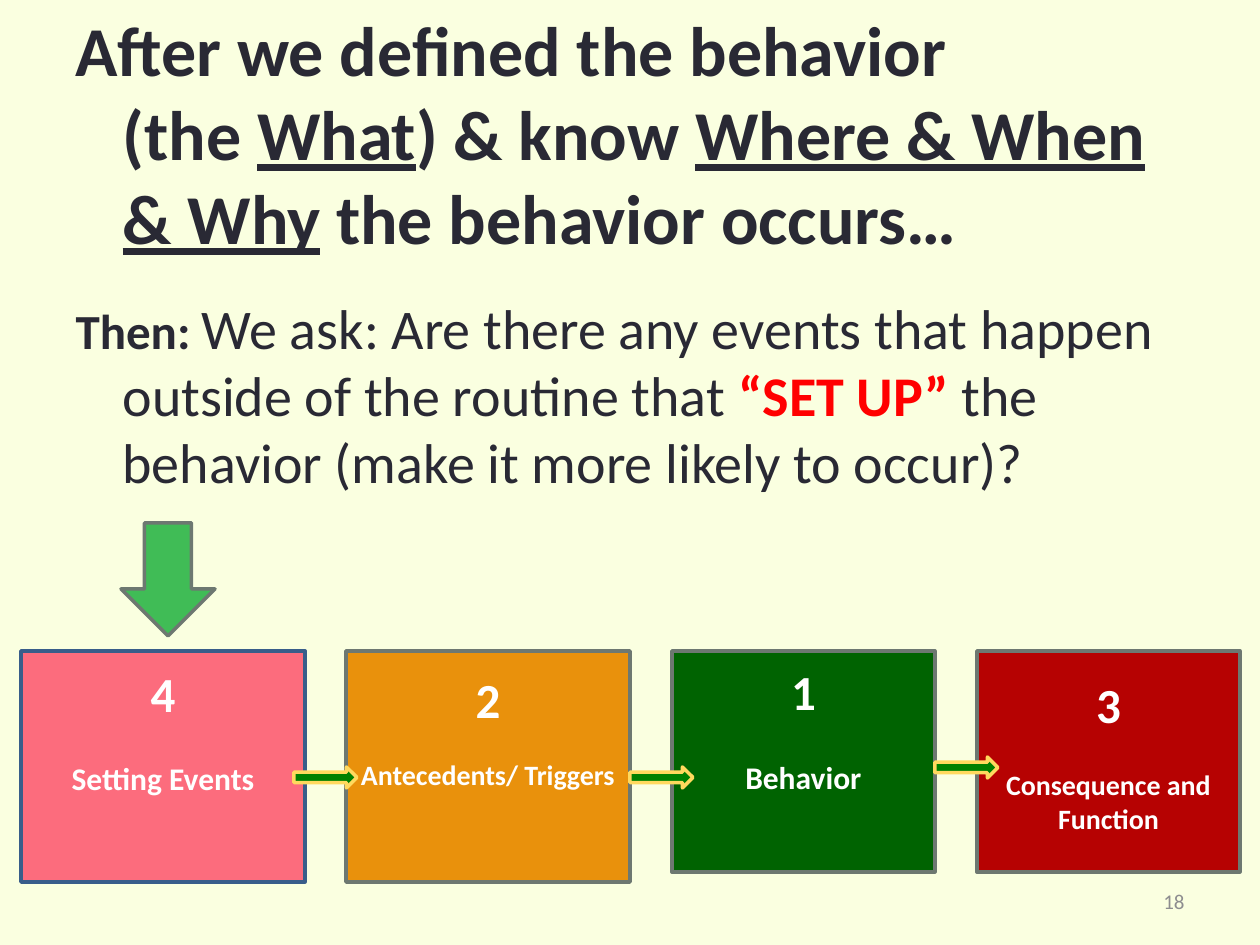
from pptx import Presentation
from pptx.dml.color import RGBColor
from pptx.enum.shapes import MSO_SHAPE
from pptx.enum.text import MSO_ANCHOR, MSO_AUTO_SIZE, PP_ALIGN
from pptx.util import Pt

PX = 914400 // 126
FONT = "Calibri"
COLORS = {
    "background": "FAFFE0",
    "ink": "292934",
    "alert": "FF0000",
    "white": "FFFFFF",
    "grey": "8D8D8F",
    "outline": "6D7871",
    "setting": "FC6C7D",
    "setting outline": "385D8A",
    "antecedent": "E9910C",
    "behavior": "006301",
    "consequence": "B60202",
    "step arrow": "008000",
    "step outline": "FFD95E",
    "pointer": "40BC56",
}


def set_font(font, size, color, bold=False):
    font.name = FONT
    font.size = Pt(size)
    font.bold = bold
    font.color.rgb = RGBColor.from_string(COLORS[color])


def add_filled(kind, left, top, width, height, fill, outline):
    """Add a preset shape, placed in px, with a flat fill and a 2 pt outline."""
    shape = slide.shapes.add_shape(kind, left * PX, top * PX, width * PX, height * PX)
    shape.shadow.inherit = False
    shape.fill.solid()
    shape.fill.fore_color.rgb = RGBColor.from_string(COLORS[fill])
    shape.line.color.rgb = RGBColor.from_string(COLORS[outline])
    shape.line.width = Pt(2)
    return shape


prs = Presentation()
prs.slide_width, prs.slide_height = 1260 * PX, 945 * PX
slide = prs.slides.add_slide(prs.slide_layouts[1])
slide.background.fill.solid()
slide.background.fill.fore_color.rgb = RGBColor.from_string(COLORS["background"])

# Heading and question share the body placeholder; the title is not needed
unused_title = slide.shapes.title.element
unused_title.getparent().remove(unused_title)
body = slide.placeholders[1]
body.left, body.top, body.width, body.height = 63 * PX, 0, 1134 * PX, 878 * PX
body.text_frame.auto_size = MSO_AUTO_SIZE.NONE
body.text_frame.vertical_anchor = MSO_ANCHOR.TOP

heading = body.text_frame.paragraphs[0]
question = body.text_frame.add_paragraph()
for paragraph, before, after in [(heading, 0, 14), (question, 6, 0)]:
    paragraph.space_before, paragraph.space_after = Pt(before), Pt(after)
    properties = paragraph._p.get_or_add_pPr()
    properties.set("marL", str(47 * PX))
    properties.set("indent", str(-47 * PX))
    properties.append(properties.makeelement(
        "{http://schemas.openxmlformats.org/drawingml/2006/main}buNone", {}))

set_font(heading.font, 40, "ink", True)
heading.add_run().text = "After we defined the behavior"
heading.add_line_break()
for text, underlined in [
    ("(the ", False),
    ("What", True),
    (") & know ", False),
    ("Where & When & Why", True),
    (" the behavior occurs…", False),
]:
    run = heading.add_run()
    run.text = text
    set_font(run.font, 40, "ink", True)
    run.font.underline = underlined

for text, size, color, bold in [
    ("Then: ", 28, "ink", True),
    ("We ask: Are there any events that happen outside of the routine that ",
     32, "ink", False),
    ("“SET UP”", 32, "alert", True),
    (" the behavior (make it more likely to occur)?", 32, "ink", False),
]:
    run = question.add_run()
    run.text = text
    set_font(run.font, size, color, bold)

# Behavior chain: left, width, height, fill, outline, number, label, label size,
# top margin in px, gap above the label in px
CHAIN_TOP = 651
for left, width, height, fill, outline, number, label, size, margin, gap in [
    (21, 284, 231, "setting", "setting outline", "4", "Setting Events", 18, 13, 36),
    (346, 284, 231, "antecedent", "outline", "2", "Antecedents/ Triggers", 16, 18, 30),
    (672, 263, 221, "behavior", "outline", "1", "Behavior", 18, 10, 38),
    (977, 263, 221, "consequence", "outline", "3", "Consequence and Function", 16, 23, 35),
]:
    step = add_filled(MSO_SHAPE.RECTANGLE, left, CHAIN_TOP, width, height, fill, outline)
    frame = step.text_frame
    frame.word_wrap = True
    frame.vertical_anchor = MSO_ANCHOR.TOP
    frame.margin_top = margin * PX
    number_line, label_line = frame.paragraphs[0], frame.add_paragraph()
    number_line.text, label_line.text = number, label
    set_font(number_line.font, 28, "white", True)
    set_font(label_line.font, size, "white", True)
    label_line.space_before = gap * PX
    number_line.alignment = label_line.alignment = PP_ALIGN.CENTER

for left, top in [(294, 767), (630, 767), (935, 757)]:
    add_filled(MSO_SHAPE.RIGHT_ARROW, left, top, 63, 21, "step arrow", "step outline")
add_filled(MSO_SHAPE.DOWN_ARROW, 121, 523, 94, 113, "pointer", "outline")

page_number = slide.shapes.add_textbox(903 * PX, 876 * PX, 294 * PX, 50 * PX).text_frame
page_number.word_wrap = True
page_number.vertical_anchor = MSO_ANCHOR.MIDDLE
page_number.text = "18"
page_number.paragraphs[0].alignment = PP_ALIGN.RIGHT
set_font(page_number.paragraphs[0].font, 12, "grey")

prs.save("out.pptx")
